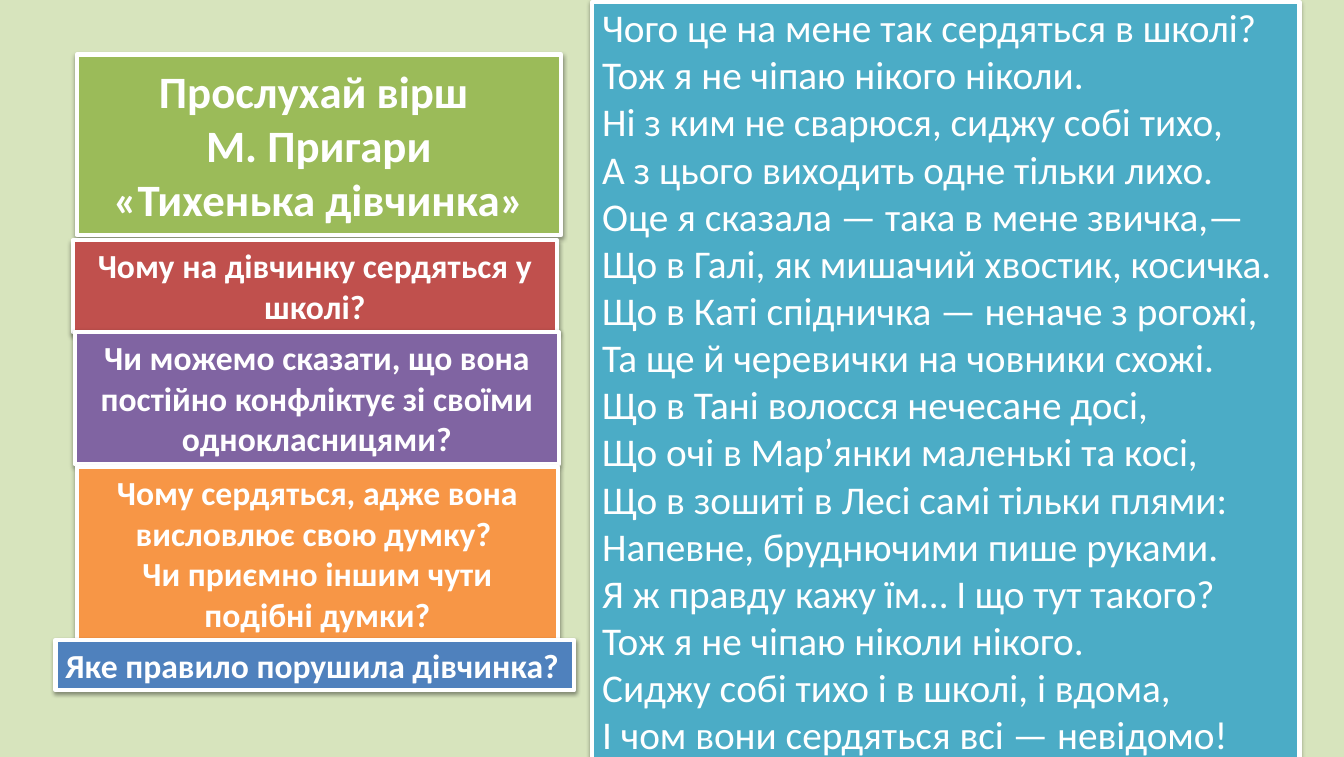
from collections import namedtuple

from lxml.etree import SubElement
from pptx import Presentation
from pptx.dml.color import RGBColor
from pptx.enum.shapes import MSO_SHAPE
from pptx.enum.text import MSO_ANCHOR, MSO_AUTO_SIZE, PP_ALIGN
from pptx.oxml.ns import qn
from pptx.util import Inches, Pt

Box = namedtuple("Box", "left top width height")

PALE_GREEN = RGBColor(0xD7, 0xE4, 0xBD)
GREEN = RGBColor(0x9B, 0xBB, 0x59)
TEAL = RGBColor(0x4B, 0xAC, 0xC6)
RED = RGBColor(0xC0, 0x50, 0x4D)
PURPLE = RGBColor(0x80, 0x64, 0xA2)
ORANGE = RGBColor(0xF7, 0x96, 0x46)
BLUE = RGBColor(0x4F, 0x81, 0xBD)
WHITE = RGBColor(0xFF, 0xFF, 0xFF)

TITLE = "Прослухай вірш \nМ. Пригари\n«Тихенька дівчинка»"
RULE_QUESTION = "Яке правило порушила дівчинка?"
QUESTIONS = [
    (Box(3.31, 29.21, 93.39, 14.44), RED, "Чому на дівчинку сердяться у школі?"),
    (Box(3.7, 43.65, 93.39, 20.79), PURPLE,
     "Чи можемо сказати, що вона постійно конфліктує зі своїми однокласницями?"),
    (Box(4.09, 64.92, 92.8, 27.3), ORANGE,
     "Чому сердяться, адже вона висловлює свою думку? \n"
     "Чи приємно іншим чути подібні думки?"),
]
POEM = """Чого це на мене так сердяться в школі?
Тож я не чіпаю нікого ніколи.
Ні з ким не сварюся, сиджу собі тихо,
А з цього виходить одне тільки лихо.
Оце я сказала — така в мене звичка,—
Що в Галі, як мишачий хвостик, косичка.
Що в Каті спідничка — неначе з рогожі,
Та ще й черевички на човники схожі.
Що в Тані волосся нечесане досі,
Що очі в Мар’янки маленькі та косі,
Що в зошиті в Лесі самі тільки плями:
Напевне, бруднючими пише руками.
Я ж правду кажу їм… І що тут такого?
Тож я не чіпаю ніколи нікого.
Сиджу собі тихо і в школі, і вдома,
І чом вони сердяться всі — невідомо!"""


def portion(box, share):
    """Return the part of a box given by percentages of its size."""
    return Box(int(box.left + box.width * share.left / 100),
               int(box.top + box.height * share.top / 100),
               int(box.width * share.width / 100),
               int(box.height * share.height / 100))


def cast_shadow(card):
    """Give a card a soft shadow straight below it."""
    card.shadow.inherit = False
    effects = card._element.spPr.find(qn("a:effectLst"))
    shadow = SubElement(effects, qn("a:outerShdw"), blurRad=str(Pt(3.1)),
                        dist=str(Pt(1.6)), dir="5400000", rotWithShape="0")
    black = SubElement(shadow, qn("a:srgbClr"), val="000000")
    SubElement(black, qn("a:alpha"), val="38000")


def add_card(slide, box, fill, text, size, bold=True, align=PP_ALIGN.CENTER,
             anchor=MSO_ANCHOR.TOP, grow=True, wrap=True):
    """Draw a white-edged colour card with its text."""
    card = slide.shapes.add_shape(MSO_SHAPE.RECTANGLE, *box)
    card.fill.solid()
    card.fill.fore_color.rgb = fill
    card.line.color.rgb = WHITE
    card.line.width = Pt(3)
    cast_shadow(card)
    frame = card.text_frame
    frame.text = text
    frame.word_wrap = wrap
    frame.vertical_anchor = anchor
    frame.auto_size = MSO_AUTO_SIZE.SHAPE_TO_FIT_TEXT if grow else MSO_AUTO_SIZE.NONE
    for paragraph in frame.paragraphs:
        paragraph.alignment = align
        for run in paragraph.runs:
            run.font.name = "Calibri"
            run.font.size = Pt(size)
            run.font.bold = bold
            run.font.color.rgb = WHITE


def add_poem(slide, box):
    """Fill the box with the poem."""
    add_card(slide, box, TEAL, POEM, 28, bold=False, align=PP_ALIGN.LEFT,
             anchor=MSO_ANCHOR.MIDDLE, grow=False)


def add_title(slide, box):
    """Place the title card at the top of the column."""
    add_card(slide, portion(box, Box(4.09, 0, 93.39, 28.41)), GREEN, TITLE, 32,
             anchor=MSO_ANCHOR.MIDDLE, grow=False)


def add_questions(slide, box):
    """Stack the question cards down the column."""
    for share, fill, question in QUESTIONS:
        add_card(slide, portion(box, share), fill, question, 24)
    add_card(slide, portion(box, Box(0, 92.06, 100, 7.94)), BLUE, RULE_QUESTION, 24,
             align=PP_ALIGN.LEFT, wrap=False)


def main():
    """Build the poem discussion slide and save it."""
    deck = Presentation()
    deck.slide_width, deck.slide_height = Inches(13.32), Inches(7.5)
    slide = deck.slides.add_slide(deck.slide_layouts[6])
    slide.background.fill.solid()
    slide.background.fill.fore_color.rgb = PALE_GREEN
    page = Box(0, 0, deck.slide_width, deck.slide_height)
    column = portion(page, Box(4.13, 7.2, 38.59, 84))
    add_title(slide, column)
    add_poem(slide, portion(page, Box(44.07, 0.27, 52.63, 100)))
    add_questions(slide, column)
    deck.save("out.pptx")


if __name__ == "__main__":
    main()
